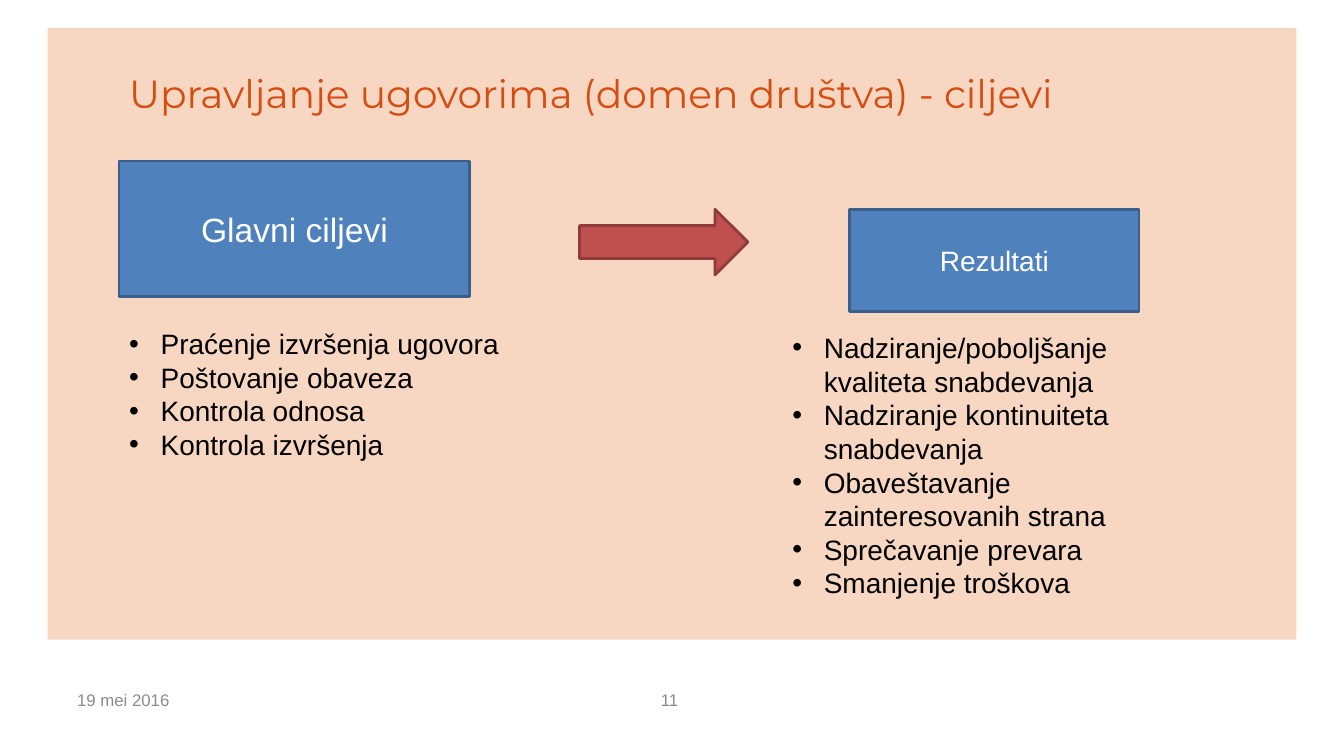
from dataclasses import dataclass

from lxml.etree import SubElement
from pptx import Presentation
from pptx.dml.color import RGBColor
from pptx.enum.shapes import MSO_SHAPE
from pptx.enum.text import MSO_ANCHOR, MSO_AUTO_SIZE, PP_ALIGN
from pptx.oxml.ns import qn
from pptx.util import Pt


@dataclass(frozen=True)
class Theme:
    heading_font: str = "Montserrat"
    body_font: str = "Arial"
    panel: str = "F7D7C1"
    title: str = "D54D13"
    box: str = "4F81BD"
    box_line: str = "3A5F8C"
    arrow: str = "C0504D"
    arrow_line: str = "8E3B39"
    text: str = "000000"
    on_box: str = "FFFFFF"
    date: str = "8C8C8C"
    number: str = "898989"
    title_size: int = 28
    lead_size: int = 24
    text_size: int = 20
    footer_size: int = 12
    line_width: int = 2
    indent: float = 22.5


class SlideBuilder:
    def __init__(self, prs, layout, theme):
        self.s = prs.slides.add_slide(layout)
        self.theme = theme

    def place(self, shape, box):
        shape.left, shape.top, shape.width, shape.height = map(Pt, box)

    def format(self, p, size, color, font=None, align=PP_ALIGN.LEFT):
        p.alignment = align
        for r in p.runs:
            r.font.name = font or self.theme.body_font
            r.font.size = Pt(size)
            r.font.color.rgb = RGBColor.from_string(color)

    def title(self, text, box):
        sp = self.s.shapes.title
        self.place(sp, box)
        tf = sp.text_frame
        tf.text = text
        tf.auto_size = MSO_AUTO_SIZE.NONE
        tf.vertical_anchor = MSO_ANCHOR.MIDDLE
        self.format(tf.paragraphs[0], self.theme.title_size, self.theme.title,
                    self.theme.heading_font)

    def bullets(self, idx, items, box):
        sp = self.s.placeholders[idx]
        self.place(sp, box)
        tf = sp.text_frame
        tf.text = "\n".join(items)
        tf.auto_size = MSO_AUTO_SIZE.NONE
        for p in tf.paragraphs:
            p.space_before = Pt(0)
            pPr = p._p.get_or_add_pPr()
            pPr.set("marL", str(Pt(self.theme.indent)))
            pPr.set("indent", str(-Pt(self.theme.indent)))
            SubElement(pPr, qn("a:buFont"), typeface=self.theme.body_font)
            SubElement(pPr, qn("a:buChar"), char="•")
            self.format(p, self.theme.text_size, self.theme.text)

    def shape(self, kind, box, fill, line=None):
        sp = self.s.shapes.add_shape(kind, *map(Pt, box))
        sp.shadow.inherit = False
        sp.fill.solid()
        sp.fill.fore_color.rgb = RGBColor.from_string(fill)
        if line:
            sp.line.color.rgb = RGBColor.from_string(line)
            sp.line.width = Pt(self.theme.line_width)
        else:
            sp.line.fill.background()
        return sp

    def panel(self, box):
        sp = self.shape(MSO_SHAPE.RECTANGLE, box, self.theme.panel)
        # Behind the placeholders
        self.s.shapes.element.insert(2, sp.element)

    def label_box(self, text, size, box):
        sp = self.shape(MSO_SHAPE.RECTANGLE, box, self.theme.box, self.theme.box_line)
        tf = sp.text_frame
        tf.text = text
        tf.vertical_anchor = MSO_ANCHOR.MIDDLE
        self.format(tf.paragraphs[0], size, self.theme.on_box, align=PP_ALIGN.CENTER)

    def arrow(self, box):
        self.shape(MSO_SHAPE.RIGHT_ARROW, box, self.theme.arrow, self.theme.arrow_line)

    def footer(self, text, color, box):
        tf = self.s.shapes.add_textbox(*map(Pt, box)).text_frame
        tf.word_wrap = True
        tf.vertical_anchor = MSO_ANCHOR.MIDDLE
        tf.text = text
        self.format(tf.paragraphs[0], self.theme.footer_size, color)


def main():
    prs = Presentation()
    prs.slide_width, prs.slide_height = Pt(960), Pt(540)
    theme = Theme()
    b = SlideBuilder(prs, prs.slide_layouts.get_by_name("Two Content"), theme)

    # Background and title
    b.panel((34, 20, 892, 437))
    b.title("Upravljanje ugovorima (domen društva) - ciljevi", (85, 32, 803.5, 68))

    # Goals
    b.label_box("Glavni ciljevi", theme.lead_size, (85, 115, 250.5, 97))
    b.bullets(1, ["Praćenje izvršenja ugovora",
                  "Poštovanje obaveza",
                  "Kontrola odnosa",
                  "Kontrola izvršenja"], (85, 229.7, 283.7, 104.4))

    # Goals lead to results
    b.arrow((414, 149.5, 120.2, 46.8))

    # Results
    b.label_box("Rezultati", theme.text_size, (607, 149.7, 206.6, 72.7))
    b.bullets(2, ["Nadziranje/poboljšanje kvaliteta snabdevanja",
                  "Nadziranje kontinuiteta snabdevanja",
                  "Obaveštavanje zainteresovanih strana",
                  "Sprečavanje prevara",
                  "Smanjenje troškova"], (558.7, 232.5, 254.9, 244.8))

    # Footer
    b.footer("19 mei 2016", theme.date, (48, 485.3, 224, 28.8))
    b.footer("11", theme.number, (465, 485.3, 83.5, 28.8))

    prs.save("out.pptx")


if __name__ == "__main__":
    main()
